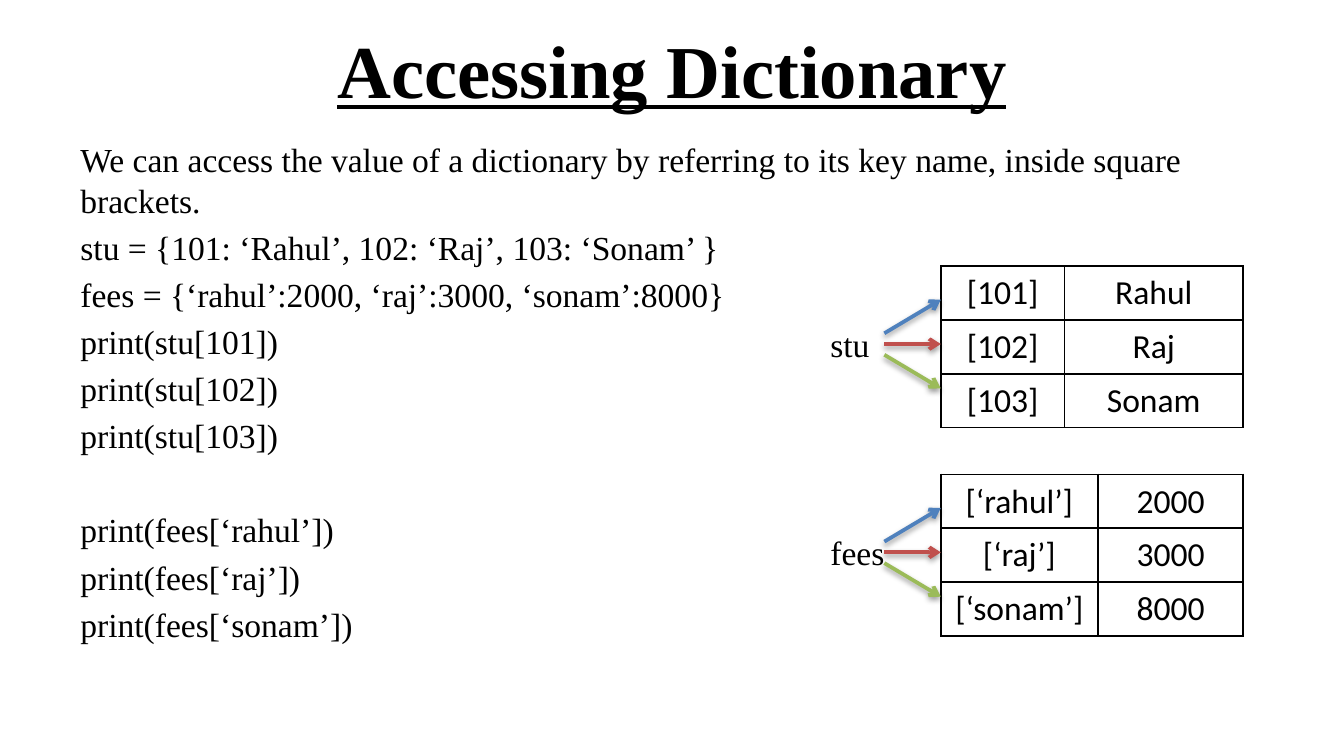
from lxml import etree
from pptx import Presentation
from pptx import util as u
from pptx.dml.color import RGBColor
from pptx.enum import shapes, text
from pptx.oxml import parse_xml
from pptx.oxml.ns import nsdecls, qn

# Content
TITLE = "Accessing Dictionary"
CODE_BLOCKS = [
    ["We can access the value of a dictionary by referring to its key name, "
     "inside square brackets.",
     "stu = {101: ‘Rahul’, 102: ‘Raj’, 103: ‘Sonam’ }",
     "fees = {‘rahul’:2000, ‘raj’:3000, ‘sonam’:8000}",
     "print(stu[101])", "print(stu[102])", "print(stu[103])"],
    ["print(fees[‘rahul’])", "print(fees[‘raj’])", "print(fees[‘sonam’])"],
]
DICTIONARIES = [
    {"name": "stu", "top": 1.98, "label_width": 0.5, "key_width": 0.92,
     "items": [("[101]", "Rahul"), ("[102]", "Raj"), ("[103]", "Sonam")]},
    {"name": "fees", "top": 3.53, "label_width": 0.61, "key_width": 1.17,
     "items": [("[‘rahul’]", "2000"), ("[‘raj’]", "3000"), ("[‘sonam’]", "8000")]},
]

# Style and layout, in inches and points
SERIF, SANS, BLACK = "Times New Roman", "Calibri", "000000"
ARROW_COLORS = ["4F81BD", "C0504D", "9BBB59"]
SLIDE_WIDTH = 10
SLIDE_HEIGHT = SLIDE_WIDTH * 9 / 16
MARGIN, CONTENT_WIDTH = 0.5, 9
TABLE_LEFT, TABLE_WIDTH, ROW_HEIGHT = 7, 2.25, 0.4
LABEL_LEFT, ARROW_LEFT = 6.08, 6.58
LINE_HEIGHT, LINE_GAP = 22, 3.2


def rgb(value):
    return RGBColor.from_string(value)


def place(shape, left, top, width, height):
    shape.left, shape.top = u.Inches(left), u.Inches(top)
    shape.width, shape.height = u.Inches(width), u.Inches(height)


def add_run(paragraph, content, size=18, font=SERIF):
    run = paragraph.add_run()
    run.text = content
    run.font.size, run.font.name = u.Pt(size), font
    run.font.color.rgb = rgb(BLACK)
    return run


def add_text_box(slide, left, top, width, height, wrap):
    box = slide.shapes.add_textbox(0, 0, 0, 0)
    place(box, left, top, width, height)
    box.text_frame.word_wrap = wrap
    return box.text_frame


def add_borders(cell):
    properties = cell._tc.get_or_add_tcPr()
    for position, side in enumerate(("lnL", "lnR", "lnT", "lnB")):
        properties.insert(position, parse_xml(
            f'<a:{side} {nsdecls("a")} w="12700"><a:solidFill>'
            f'<a:srgbClr val="{BLACK}"/></a:solidFill></a:{side}>'))


def add_arrow(slide, start_y, end_y, color):
    arrow = slide.shapes.add_connector(
        shapes.MSO_CONNECTOR.STRAIGHT, u.Inches(ARROW_LEFT), u.Inches(start_y),
        u.Inches(TABLE_LEFT), u.Inches(end_y))
    arrow.line.color.rgb, arrow.line.width = rgb(color), u.Pt(2)
    etree.SubElement(arrow.line._get_or_add_ln(), qn("a:tailEnd"), type="arrow")
    arrow._element.spPr.append(parse_xml(
        f'<a:effectLst {nsdecls("a")}><a:outerShdw blurRad="39370" dist="20320" '
        f'dir="5400000" rotWithShape="0"><a:srgbClr val="{BLACK}">'
        '<a:alpha val="38000"/></a:srgbClr></a:outerShdw></a:effectLst>'))


def add_table(slide, top, key_width, items):
    frame = slide.shapes.add_table(
        len(items), 2, u.Inches(TABLE_LEFT), u.Inches(top),
        u.Inches(TABLE_WIDTH), u.Inches(ROW_HEIGHT * len(items)))
    table = frame.table
    table.first_row = table.horz_banding = False
    for column, width in zip(table.columns, (key_width, TABLE_WIDTH - key_width)):
        column.width = u.Inches(width)
    for row, item in enumerate(items):
        for column, content in enumerate(item):
            cell = table.cell(row, column)
            cell.fill.background()
            add_borders(cell)
            paragraph = cell.text_frame.paragraphs[0]
            paragraph.alignment = text.PP_ALIGN.CENTER
            add_run(paragraph, content, font=SANS)


def add_dictionary(slide, name, top, label_width, key_width, items):
    add_table(slide, top, key_width, items)
    label = add_text_box(slide, LABEL_LEFT, top + 0.38, label_width, 0.4, False)
    add_run(label.paragraphs[0], name)
    # Arrows fan out from the label to the rows
    middle = top + 0.58
    for step, color in zip((-1, 0, 1), ARROW_COLORS):
        add_arrow(slide, middle + 0.08 * step, middle + 0.33 * step, color)


def main():
    presentation = Presentation()
    presentation.slide_width = u.Inches(SLIDE_WIDTH)
    presentation.slide_height = u.Inches(SLIDE_HEIGHT)
    slide = presentation.slides.add_slide(presentation.slide_layouts[5])

    # Title
    title = slide.shapes.title
    place(title, MARGIN, 0.04, CONTENT_WIDTH, 0.94)
    title.text_frame.vertical_anchor = text.MSO_ANCHOR.MIDDLE
    paragraph = title.text_frame.paragraphs[0]
    paragraph.alignment = text.PP_ALIGN.CENTER
    run = add_run(paragraph, TITLE, size=40)
    run.font.bold = run.font.underline = True

    # Explanation and code, with one line of space between the blocks
    body = add_text_box(slide, MARGIN, 0.98, CONTENT_WIDTH, 4.08, True)
    for block_index, block in enumerate(CODE_BLOCKS):
        for line_index, line in enumerate(block):
            first = block_index == line_index == 0
            paragraph = body.paragraphs[0] if first else body.add_paragraph()
            paragraph.line_spacing = u.Pt(LINE_HEIGHT)
            new_block = block_index > 0 and line_index == 0
            gap = LINE_HEIGHT + 2 * LINE_GAP if new_block else LINE_GAP
            paragraph.space_before = u.Pt(0 if first else gap)
            add_run(paragraph, line)

    # Dictionary diagrams
    for dictionary in DICTIONARIES:
        add_dictionary(slide, **dictionary)

    presentation.save("out.pptx")


if __name__ == "__main__":
    main()
